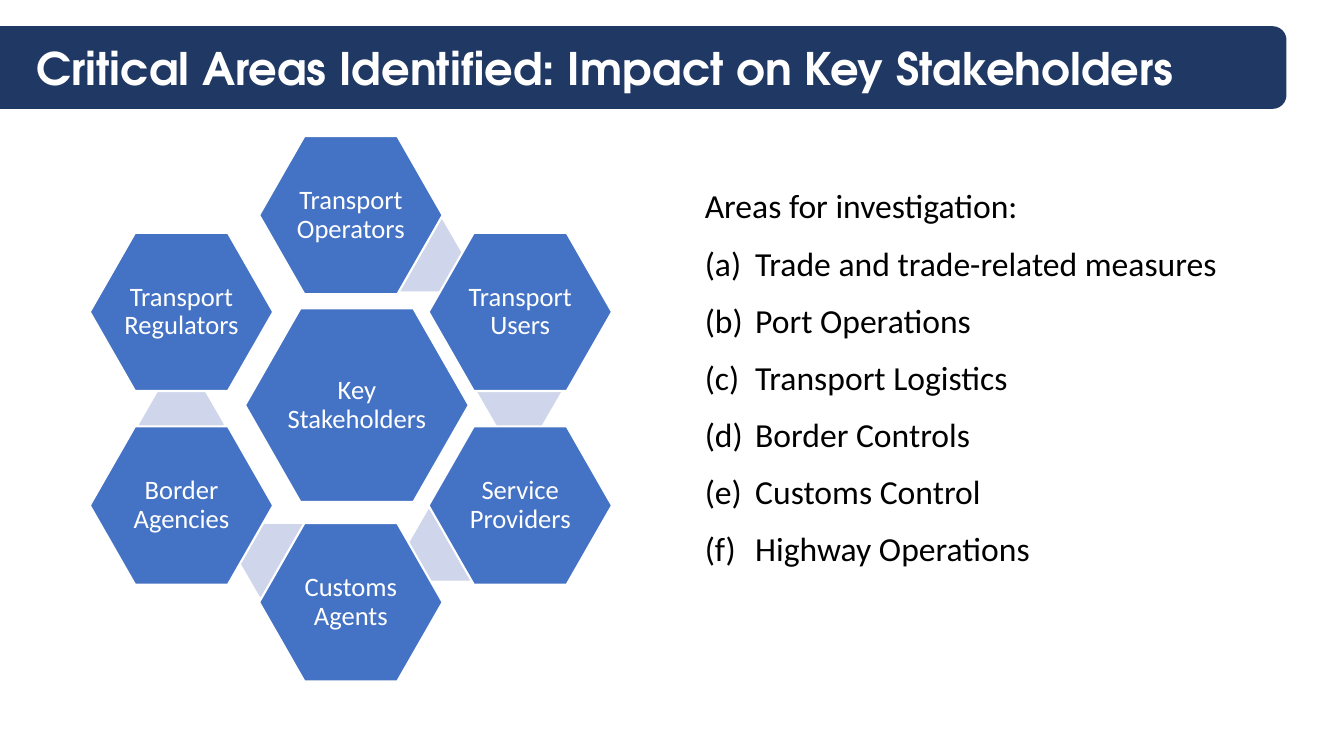
from lxml.etree import SubElement
from pptx import Presentation
from pptx.dml.color import RGBColor
from pptx.enum.shapes import MSO_SHAPE
from pptx.enum.text import MSO_ANCHOR, MSO_AUTO_SIZE, PP_ALIGN
from pptx.oxml.ns import qn
from pptx.util import Pt

PX = 9144  # 100 px to the inch
NAVY = RGBColor(0x20, 0x38, 0x64)
BLUE = RGBColor(0x44, 0x72, 0xC4)
PALE = RGBColor(0xCF, 0xD5, 0xEA)
WHITE = RGBColor(0xFF, 0xFF, 0xFF)
BLACK = RGBColor(0x00, 0x00, 0x00)

prs = Presentation()
prs.slide_width, prs.slide_height = 1333 * PX, 750 * PX
s = prs.slides.add_slide(prs.slide_layouts[1])


def add_shape(kind, box, fill, line=None, adj=0.167):
    sp = s.shapes.add_shape(kind, *[v * PX for v in box])
    sp.shadow.inherit = False
    sp.adjustments[0] = adj
    sp.fill.solid()
    sp.fill.fore_color.rgb = fill
    if line is None:
        sp.line.fill.background()
    else:
        sp.line.color.rgb = line
        sp.line.width = Pt(1.5)
    return sp


def write(p, text, color, size, name="Calibri", bold=False, **layout):
    r = p.add_run()
    r.text = text
    r.font.color.rgb = color
    for key, value in {"size": Pt(size), "name": name, "bold": bold}.items():
        setattr(r.font, key, value)
    for key, value in layout.items():
        setattr(p, key, value)


# Title on its band
title, body = s.shapes.title, s.placeholders[1]
band = add_shape(MSO_SHAPE.ROUNDED_RECTANGLE, (-17, 26, 1293, 82), NAVY)
s.shapes._spTree.insert(2, band._element)
frames = [
    (title, (36, 26, 1220, 82), MSO_ANCHOR.MIDDLE, 0),
    (body, (689, 176, 586, 499), MSO_ANCHOR.TOP, 10),
]
for sp, box, anchor, inset in frames:
    sp.left, sp.top, sp.width, sp.height = [v * PX for v in box]
    tf = sp.text_frame
    settings = {"auto_size": MSO_AUTO_SIZE.NONE, "word_wrap": True, "vertical_anchor": anchor,
                "margin_left": inset * PX, "margin_right": inset * PX}
    for key, value in settings.items():
        setattr(tf, key, value)
write(title.text_frame.paragraphs[0], "Critical Areas Identified: Impact on Key Stakeholders",
      WHITE, 32, "TeX Gyre Adventor", True, alignment=PP_ALIGN.LEFT)

# Lettered list of areas
areas = ["Areas for investigation:", "Trade and trade-related measures", "Port Operations",
         "Transport Logistics", "Border Controls", "Customs Control", "Highway Operations"]
tf = body.text_frame
for i, area in enumerate(areas):
    p = tf.add_paragraph() if i else tf.paragraphs[0]
    pPr = p._p.get_or_add_pPr()
    indent = 50 * PX if i else 0
    pPr.set("marL", str(indent))
    pPr.set("indent", str(-indent))
    if i:
        SubElement(pPr, qn("a:buFont"), typeface="+mj-lt")
        SubElement(pPr, qn("a:buAutoNum"), type="alphaLcParenBoth")
    else:
        SubElement(pPr, qn("a:buNone"))
    write(p, area, BLACK, 24, alignment=PP_ALIGN.JUSTIFY, line_spacing=1.07,
          space_before=Pt(10 if i else 0), space_after=Pt(0))

# Pale links lie behind the ring of stakeholders
for left, top in [(375, 217), (473, 352), (405, 504), (237, 520), (138, 385)]:
    add_shape(MSO_SHAPE.HEXAGON, (left, top, 84, 72), PALE, adj=0.289)

# Column and row steps of each stakeholder around the centre
ring = [("Transport Operators", 0, -2), ("Transport Users", 1, -1), ("Service Providers", 1, 1),
        ("Customs Agents", 0, 2), ("Border Agencies", -1, 1), ("Transport Regulators", -1, -1)]
tiles = [("Key Stakeholders", (243, 306, 222, 192))]
tiles += [(label, (257 + 168 * col, 327 + 96 * row, 182, 157)) for label, col, row in ring]
for label, box in tiles:
    sp = add_shape(MSO_SHAPE.HEXAGON, box, BLUE, WHITE, 0.286)
    tf = sp.text_frame
    settings = {"word_wrap": True, "vertical_anchor": MSO_ANCHOR.MIDDLE, "margin_left": PX,
                "margin_right": PX, "margin_top": 3 * PX, "margin_bottom": 3 * PX}
    for key, value in settings.items():
        setattr(tf, key, value)
    write(tf.paragraphs[0], label, WHITE, 19, alignment=PP_ALIGN.CENTER, line_spacing=0.9)

prs.save("out.pptx")
